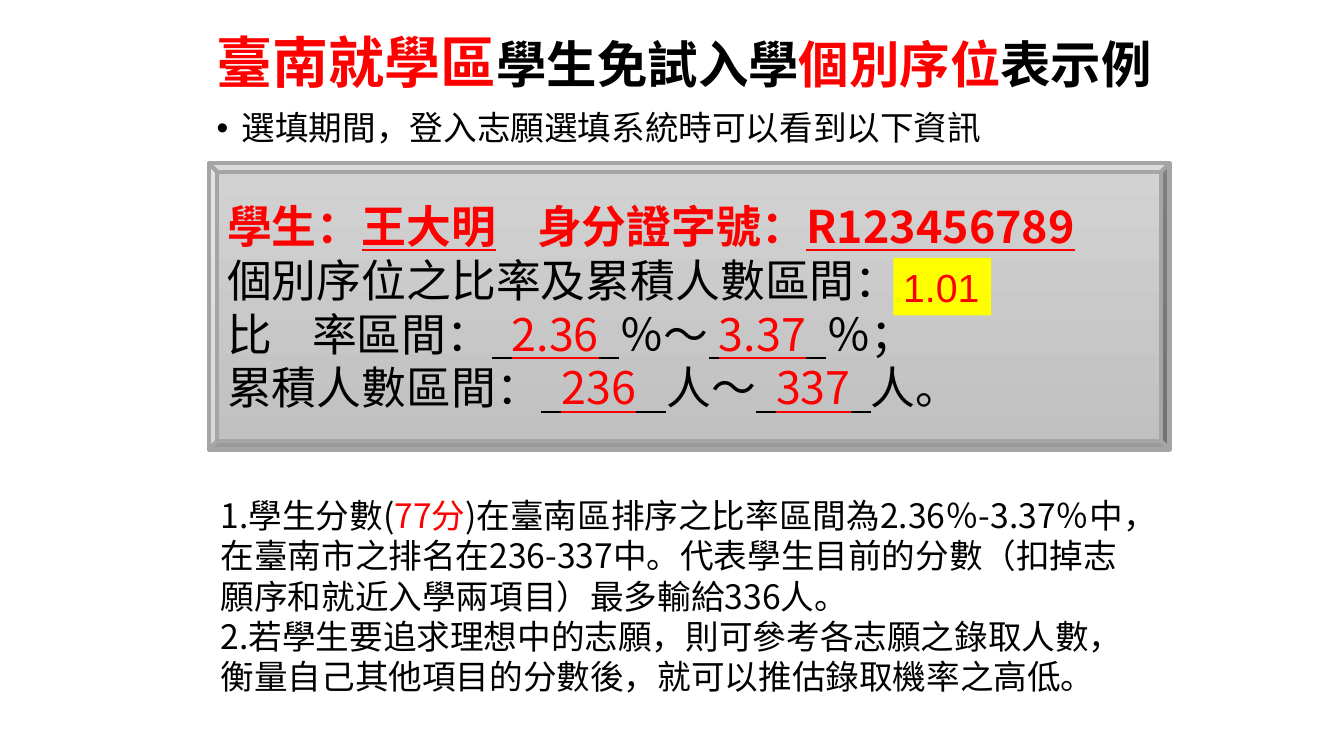
"""Build the slide that explains a student's individual rank report for the Tainan district."""
import pptx
import pptx.dml.color
import pptx.enum.shapes
import pptx.enum.text
import pptx.oxml.ns
import pptx.util
from lxml import etree
from pptx.util import Inches

THEME = {
    "text": "000000", "accent": "FF0000", "highlight": "FFFF00",
    "panel_top": "D2D2D2", "panel_bottom": "C0C0C0", "panel_edge": "A5A5A5",
    "font": "Noto Sans CJK SC", "number_font": "Arial",
    "title": 40, "title_small": 36, "report": 32, "difference": 28, "body": 24,
}
RED = {"color": "accent"}
BLANK = {"underline": True}
VALUE = {"color": "accent", "underline": True}
LABEL = {"color": "accent", "bold": True}
ENTRY = {"color": "accent", "bold": True, "underline": True}


def rgb(role):
    return pptx.dml.color.RGBColor.from_string(THEME[role])


def write(frame, paragraphs, size, font="font", **frame_format):
    frame_format = {"word_wrap": True, **frame_format}
    for attribute, value in frame_format.items():
        setattr(frame, attribute, value)
    for index, pieces in enumerate(paragraphs):
        paragraph = frame.paragraphs[0] if index == 0 else frame.add_paragraph()
        paragraph.alignment = pptx.enum.text.PP_ALIGN.LEFT
        for text, style in pieces:
            run = paragraph.add_run()
            run.text = text
            look = {"color": "text", "size": size, "bold": False, "underline": False, **style}
            run.font.color.rgb = rgb(look.pop("color"))
            look["size"] = pptx.util.Pt(THEME[look["size"]])
            look["name"] = THEME[font]
            for attribute, value in look.items():
                setattr(run.font, attribute, value)
            east_asian = etree.SubElement(run.font._element, pptx.oxml.ns.qn("a:ea"))
            east_asian.set("typeface", THEME[font])


deck = pptx.Presentation()
deck.slide_width, deck.slide_height = Inches(13.33), Inches(7.5)
slide = deck.slides.add_slide(deck.slide_layouts[6])
shapes = slide.shapes

intro = shapes.add_textbox(Inches(2.05), Inches(1.06), Inches(9), Inches(0.55)).text_frame
write(intro, [[("選填期間，登入志願選填系統時可以看到以下資訊", {})]], "body")
intro_line = intro.paragraphs[0]
intro_line.line_spacing = 0.9
intro_line.space_before = pptx.util.Pt(10)
bullet_format = intro_line._p.get_or_add_pPr()
for attribute, value in {"marL": Inches(0.25), "indent": -Inches(0.25)}.items():
    bullet_format.set(attribute, str(value))
for tag, attribute, value in [("a:buFont", "typeface", "Arial"), ("a:buChar", "char", "•")]:
    etree.SubElement(bullet_format, pptx.oxml.ns.qn(tag)).set(attribute, value)

report = shapes.add_shape(pptx.enum.shapes.MSO_SHAPE.BEVEL,
                          Inches(2.07), Inches(1.62), Inches(9.53), Inches(2.84))
report.shadow.inherit = False
report.adjustments[0] = 0.03
report.fill.gradient()
report.fill.gradient_angle = 270
for stop, role in zip(report.fill.gradient_stops, ["panel_top", "panel_bottom"]):
    stop.color.rgb = rgb(role)
report.line.color.rgb = rgb("panel_edge")
report.line.width = pptx.util.Pt(3)
write(report.text_frame, [
    [("學生：", LABEL), ("王大明", ENTRY), ("    身分證字號：", LABEL), ("R123456789", ENTRY)],
    [("個別序位之比率及累積人數區間：", {})],
    [("比    率區間：", {}), ("  ", BLANK), ("2.36", VALUE), ("  ", BLANK), ("％～", {}),
     (" ", BLANK), ("3.37", VALUE), ("  ", BLANK), ("％；", {})],
    [("累積人數區間：", {}), ("  ", BLANK), ("236", VALUE), ("   ", BLANK), ("人～", {}),
     ("  ", BLANK), ("337", VALUE), ("  ", BLANK), ("人。", {})],
], "report", vertical_anchor=pptx.enum.text.MSO_ANCHOR.MIDDLE)

title = shapes.add_textbox(Inches(2.05), Inches(0.22), Inches(10.4), Inches(0.77))
write(title.text_frame, [[
    ("臺南就學區", {**LABEL, "size": "title"}), ("學生免試入學", {"bold": True}),
    ("個別序位", LABEL), ("表示例", {"bold": True}),
]], "title_small")

explanation = shapes.add_textbox(Inches(2.09), Inches(4.86), Inches(9.15), Inches(2.52))
write(explanation.text_frame, [
    [("1.學生分數(", {}), ("77分", RED),
     (")在臺南區排序之比率區間為2.36％-3.37％中，在臺南市之排名在236-337中。"
      "代表學生目前的分數（扣掉志願序和就近入學兩項目）最多輸給336人。", {})],
    [("2.若學生要追求理想中的志願，則可參考各志願之錄取人數，"
      "衡量自己其他項目的分數後，就可以推估錄取機率之高低。", {})],
], "body")

difference = shapes.add_shape(pptx.enum.shapes.MSO_SHAPE.RECTANGLE,
                              Inches(8.86), Inches(2.56), Inches(0.97), Inches(0.57))
difference.shadow.inherit = False
difference.fill.solid()
difference.fill.fore_color.rgb = rgb("highlight")
difference.line.fill.background()
write(difference.text_frame, [[("1.01", RED)]], "difference", "number_font", word_wrap=False)

deck.save("out.pptx")
